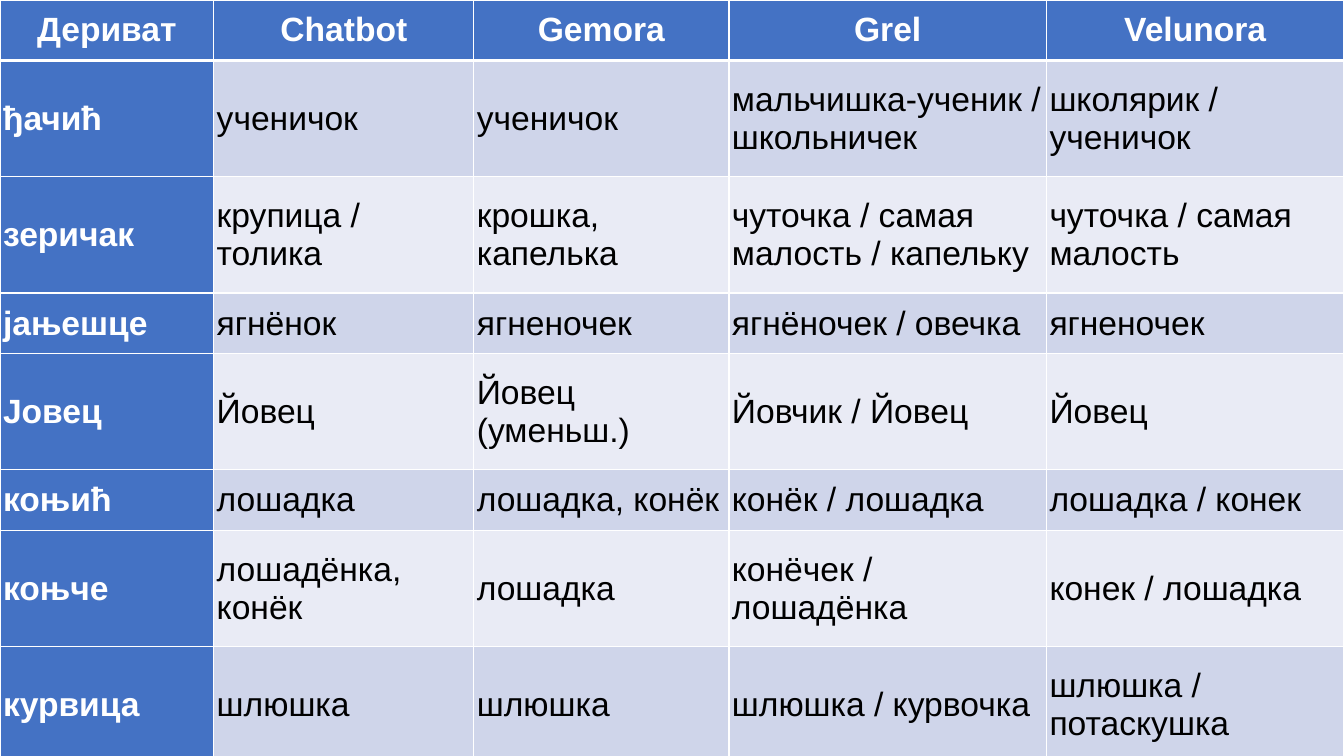
from lxml import etree
from pptx import Presentation
from pptx.dml.color import RGBColor
from pptx.enum.text import MSO_ANCHOR, PP_ALIGN
from pptx.oxml.ns import qn
from pptx.util import Inches, Pt

MIDDLE = MSO_ANCHOR.MIDDLE
CENTER, LEFT = PP_ALIGN.CENTER, PP_ALIGN.LEFT

WHITE = RGBColor(0xFF, 0xFF, 0xFF)
BLACK = RGBColor(0x00, 0x00, 0x00)
HEADING_BLUE = RGBColor(0x44, 0x72, 0xC4)
BANDS = (RGBColor(0xE9, 0xEB, 0xF5), RGBColor(0xCF, 0xD5, 0xEA))

COLUMN_WIDTHS = (2.12, 2.58, 2.53, 3.15, 2.95)
ROW_HEIGHTS = (0.6, 1.15, 1.15, 0.6, 1.15, 0.6, 1.15, 1.15)
TRANSLATIONS = (
    ("Дериват", "Chatbot", "Gemora", "Grel", "Velunora"),
    ("ђачић", "ученичок", "ученичок", "мальчишка-ученик / школьничек",
     "школярик / ученичок"),
    ("зеричак", "крупица / толика", "крошка, капелька",
     "чуточка / самая малость / капельку", "чуточка / самая малость"),
    ("јањешце", "ягнёнок", "ягненочек", "ягнёночек / овечка", "ягненочек"),
    ("Јовец", "Йовец", "Йовец (уменьш.)", "Йовчик / Йовец", "Йовец"),
    ("коњић", "лошадка", "лошадка, конёк", "конёк / лошадка",
     "лошадка / конек"),
    ("коњче", "лошадёнка, конёк", "лошадка", "конёчек / лошадёнка",
     "конек / лошадка"),
    ("курвица", "шлюшка", "шлюшка", "шлюшка / курвочка",
     "шлюшка / потаскушка"),
)


def set_borders(cell, top, bottom):
    """Draw white borders; top and bottom are widths in points."""
    properties = cell._tc.get_or_add_tcPr()
    for side, width in (("L", 1), ("R", 1), ("T", top), ("B", bottom)):
        line = etree.SubElement(properties, qn(f"a:ln{side}"), w=str(Pt(width)))
        fill = etree.SubElement(line, qn("a:solidFill"))
        etree.SubElement(fill, qn("a:srgbClr"), val=str(WHITE))


def format_cell(cell, row, column):
    is_heading = row == 0 or column == 0
    set_borders(cell, top=3 if row == 1 else 1, bottom=3 if row == 0 else 1)
    cell.fill.solid()
    cell.fill.fore_color.rgb = HEADING_BLUE if is_heading else BANDS[row % 2]
    cell.vertical_anchor = MIDDLE
    cell.margin_left = cell.margin_right = Inches(0.03)
    cell.margin_top = cell.margin_bottom = Inches(0.02)
    paragraph = cell.text_frame.paragraphs[0]
    paragraph.alignment = CENTER if row == 0 else LEFT
    font = paragraph.runs[0].font
    font.name = "Arial"
    font.size = Pt(24)
    font.bold = is_heading
    font.color.rgb = WHITE if is_heading else BLACK


def add_translation_table(slide, left, top, width, height):
    table = slide.shapes.add_table(
        len(ROW_HEIGHTS), len(COLUMN_WIDTHS), left, top, width, height).table
    table.first_col = True
    for column, share in zip(table.columns, COLUMN_WIDTHS):
        column.width = int(width * share / sum(COLUMN_WIDTHS))
    for row, share in zip(table.rows, ROW_HEIGHTS):
        row.height = int(height * share / sum(ROW_HEIGHTS))
    for r, words in enumerate(TRANSLATIONS):
        for c, word in enumerate(words):
            cell = table.cell(r, c)
            cell.text_frame.text = word
            format_cell(cell, r, c)


def main():
    presentation = Presentation()
    presentation.slide_width = Inches(13.33)
    presentation.slide_height = Inches(7.5)
    slide = presentation.slides.add_slide(presentation.slide_layouts[6])
    add_translation_table(slide, 0, 0, Inches(13.33), Inches(7.57))
    presentation.save("out.pptx")


if __name__ == "__main__":
    main()
